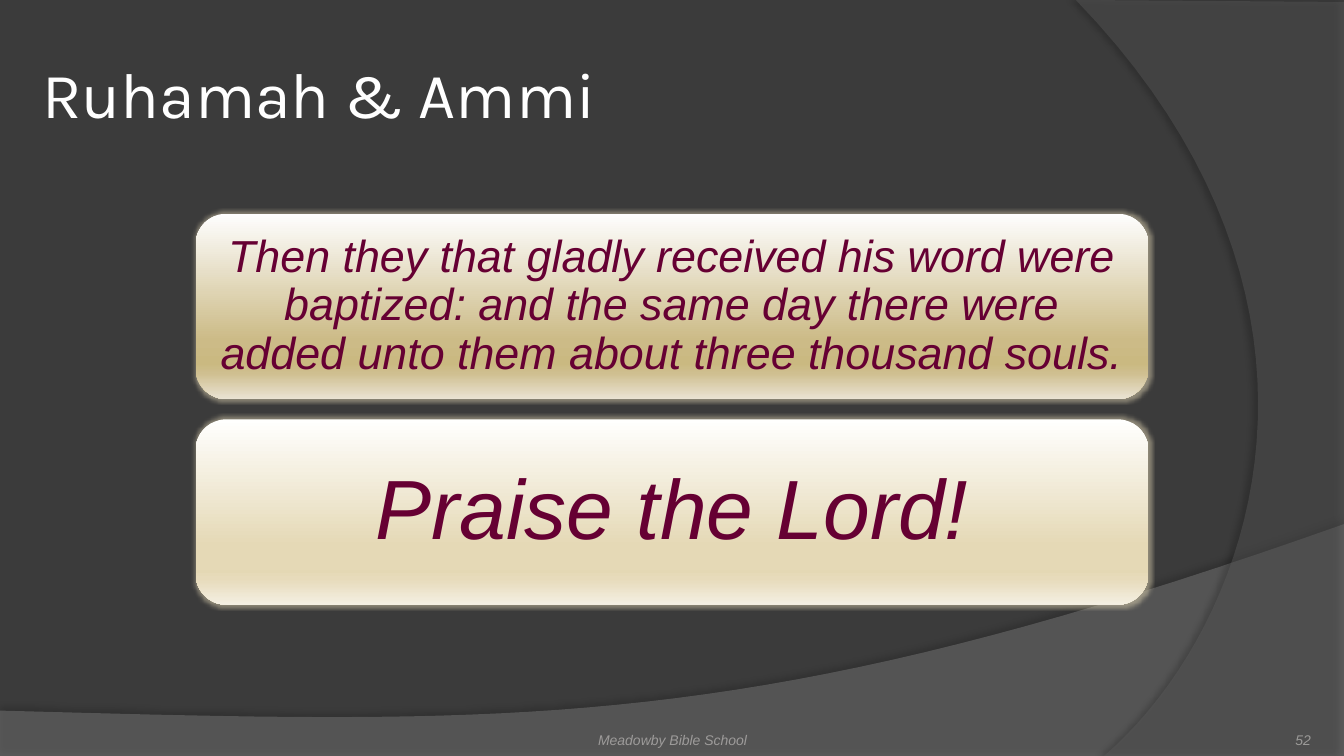
from pptx import Presentation
from pptx.dml.color import RGBColor
from pptx.enum.shapes import MSO_SHAPE
from pptx.enum.text import MSO_ANCHOR, PP_ALIGN
from pptx.oxml import parse_xml
from pptx.oxml.ns import nsdecls, qn
from pptx.util import Inches, Pt

WIDTH, HEIGHT = 13.33, 7.5
CURVE_STEPS = 40


def color(hex_text):
    return RGBColor.from_string(hex_text)


def curve(start, control_1, control_2, end):
    """Return points along a cubic Bezier curve, ends included."""
    points = []
    for step in range(CURVE_STEPS + 1):
        t = step / CURVE_STEPS
        weights = ((1 - t) ** 3, 3 * t * (1 - t) ** 2, 3 * t * t * (1 - t), t ** 3)
        points.append(tuple(
            sum(weight * value for weight, value in zip(weights, values))
            for values in zip(start, control_1, control_2, end)
        ))
    return points


class SlideBuilder:
    """Holds the style and the current slide."""

    title_font = "Karla"
    body_font = "Arial"
    background = "3B3B3B"
    title_color = "FFFFFF"
    verse_color = "660033"
    glow_color = "E5D9B6"

    def __init__(self, deck):
        self.slide = deck.slides.add_slide(deck.slide_layouts[5])
        fill = self.slide.background.fill
        fill.solid()
        fill.fore_color.rgb = color(self.background)

    def set_text(self, shape, text, size, font, hex_text, align, anchor, insets, italic=True):
        frame = shape.text_frame
        frame.word_wrap = True
        frame.vertical_anchor = anchor
        (frame.margin_left, frame.margin_top,
         frame.margin_right, frame.margin_bottom) = map(Inches, insets)
        para = frame.paragraphs[0]
        para.text = text
        para.alignment = align
        para.font.name = font
        para.font.size = Pt(size)
        para.font.italic = italic
        para.font.color.rgb = color(hex_text)
        return para

    def effect(self, shape, xml):
        properties = shape._element.spPr
        for old in properties.findall(qn("a:effectLst")):
            properties.remove(old)
        properties.append(parse_xml(f"<a:effectLst {nsdecls('a')}>{xml}</a:effectLst>"))

    def swoosh(self, points, hex_text, opacity, shadow_opacity, distance, direction):
        """Draw a translucent outline with a soft shadow."""
        builder = self.slide.shapes.build_freeform(
            *map(Inches, points[0]), scale=1.0)
        builder.add_line_segments(
            [(Inches(x), Inches(y)) for x, y in points[1:]], close=True)
        shape = builder.convert_to_shape()
        shape.fill.solid()
        shape.fill.fore_color.rgb = color(hex_text)
        shape.line.fill.background()
        shape._element.spPr.find(f".//{qn('a:srgbClr')}").append(
            parse_xml(f'<a:alpha {nsdecls("a")} val="{opacity * 1000}"/>'))
        self.effect(shape, (
            f'<a:outerShdw blurRad="{Pt(4)}" dist="{Pt(distance)}" '
            f'dir="{direction * 60000}" algn="ctr" rotWithShape="0"><a:srgbClr val="000000">'
            f'<a:alpha val="{shadow_opacity * 1000}"/></a:srgbClr></a:outerShdw>'))

    def title(self, text):
        title = self.slide.shapes.title
        title.left, title.top = Inches(0.37), Inches(0.3)
        title.width, title.height = Inches(12.6), Inches(1.25)
        self.set_text(title, text, 46, self.title_font, self.title_color,
                      PP_ALIGN.LEFT, MSO_ANCHOR.MIDDLE, (0.05,) * 4, italic=False)

    def panel(self, top, text, size, inset, stops):
        box = self.slide.shapes.add_shape(
            MSO_SHAPE.ROUNDED_RECTANGLE,
            Inches(1.94), Inches(top), Inches(9.45), Inches(1.84))
        box.line.fill.background()
        box.fill.gradient()
        box.fill.gradient_angle = 270
        stop_list = box._element.spPr.find(f".//{qn('a:gsLst')}")
        for old in list(stop_list):
            stop_list.remove(old)
        for position, hex_text in stops:
            stop_list.append(parse_xml(
                f'<a:gs {nsdecls("a")} pos="{position * 1000}">'
                f'<a:srgbClr val="{hex_text}"/></a:gs>'))
        self.effect(box, (
            f'<a:glow rad="{Pt(4)}"><a:srgbClr val="{self.glow_color}">'
            '<a:alpha val="50000"/></a:srgbClr></a:glow>'))
        para = self.set_text(box, text, size, self.body_font, self.verse_color,
                             PP_ALIGN.CENTER, MSO_ANCHOR.MIDDLE, (inset,) * 4)
        para.line_spacing = 0.9

    def footer(self, left, width, text, hex_text, align):
        box = self.slide.shapes.add_textbox(
            Inches(left), Inches(7.02), Inches(width), Inches(0.4))
        self.set_text(box, text, 10, self.body_font, hex_text,
                      align, MSO_ANCHOR.BOTTOM, (0,) * 4)


def main():
    deck = Presentation()
    deck.slide_width, deck.slide_height = Inches(WIDTH), Inches(HEIGHT)
    page = SlideBuilder(deck)

    lower_edge = curve((WIDTH, 5.2), (7.45, 7.29), (5.21, 7.19), (0, 7.05))
    page.swoosh([(0, HEIGHT), (WIDTH, HEIGHT)] + lower_edge,
                "7F7F7F", 45, 35, 3.5, 270)
    right_edge = curve((10.95, HEIGHT), (12.46, 6.19), (13.57, 3), (10.67, 0))
    page.swoosh([(WIDTH, 0.02), (WIDTH, HEIGHT)] + right_edge,
                "5E5E5E", 40, 45, 4, 180)

    page.title("Ruhamah & Ammi")
    positions = (0, 68, 81, 86, 100)
    panels = (
        ("Then they that gladly received his word were baptized: and the same day "
         "there were added unto them about three thousand souls.", 32, 0.13,
         ("FEFEFE", "CCBB87", "CAB981", "CFBF90", "EAE3D3")),
        ("Praise the Lord!", 60, 0.25,
         ("FFFFFE", "E5D9B6", "E4D8B4", "E7DBBB", "F4EFE2")),
    )
    for index, (text, size, inset, shades) in enumerate(panels):
        page.panel(2.12 + 2.04 * index, text, size, inset, zip(positions, shades))

    page.footer(11.89, 1.11, "52", "9B9A98", PP_ALIGN.RIGHT)
    page.footer(4.56, 4.22, "Meadowby Bible School", "9D9B9A", PP_ALIGN.CENTER)
    deck.save("out.pptx")


if __name__ == "__main__":
    main()
